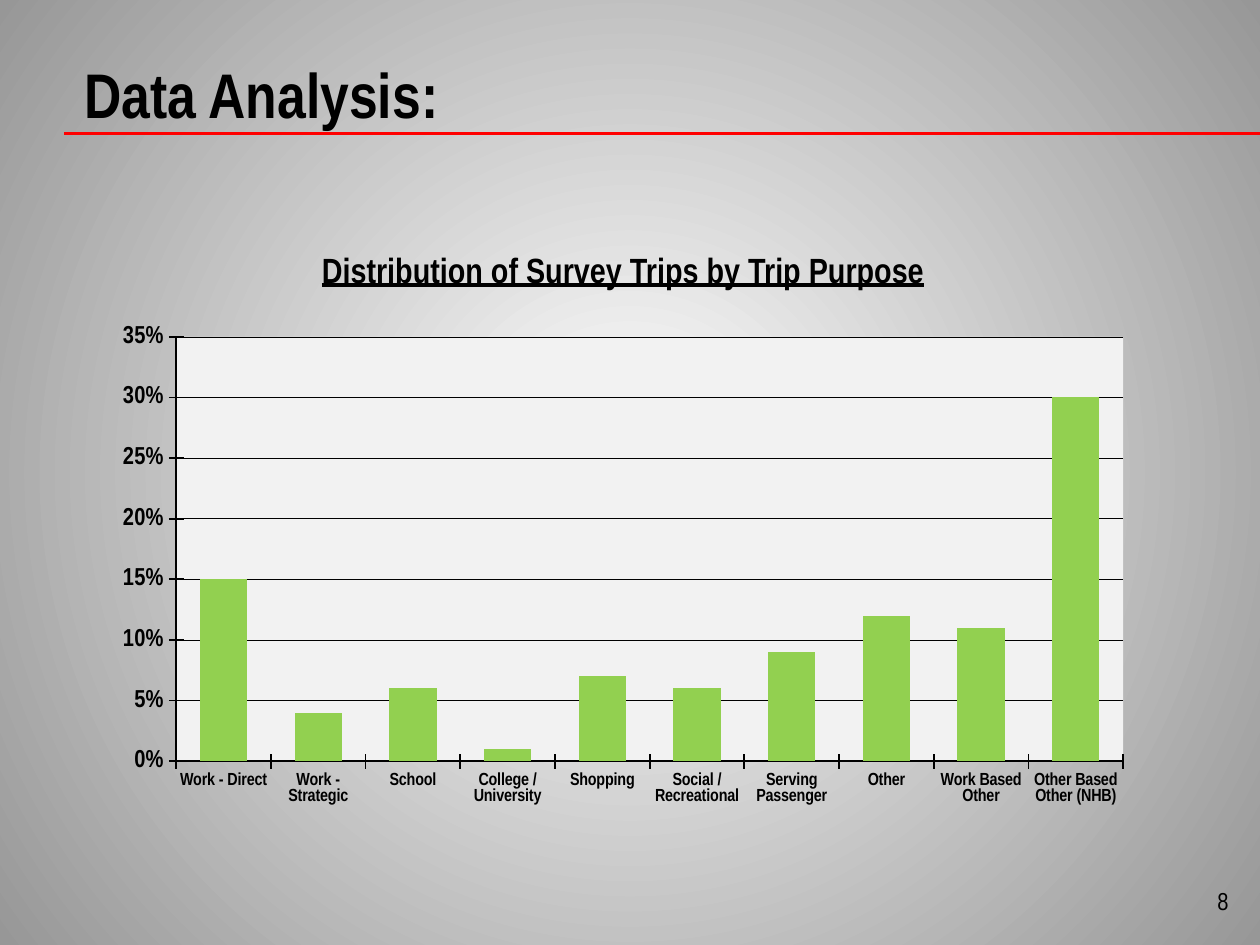
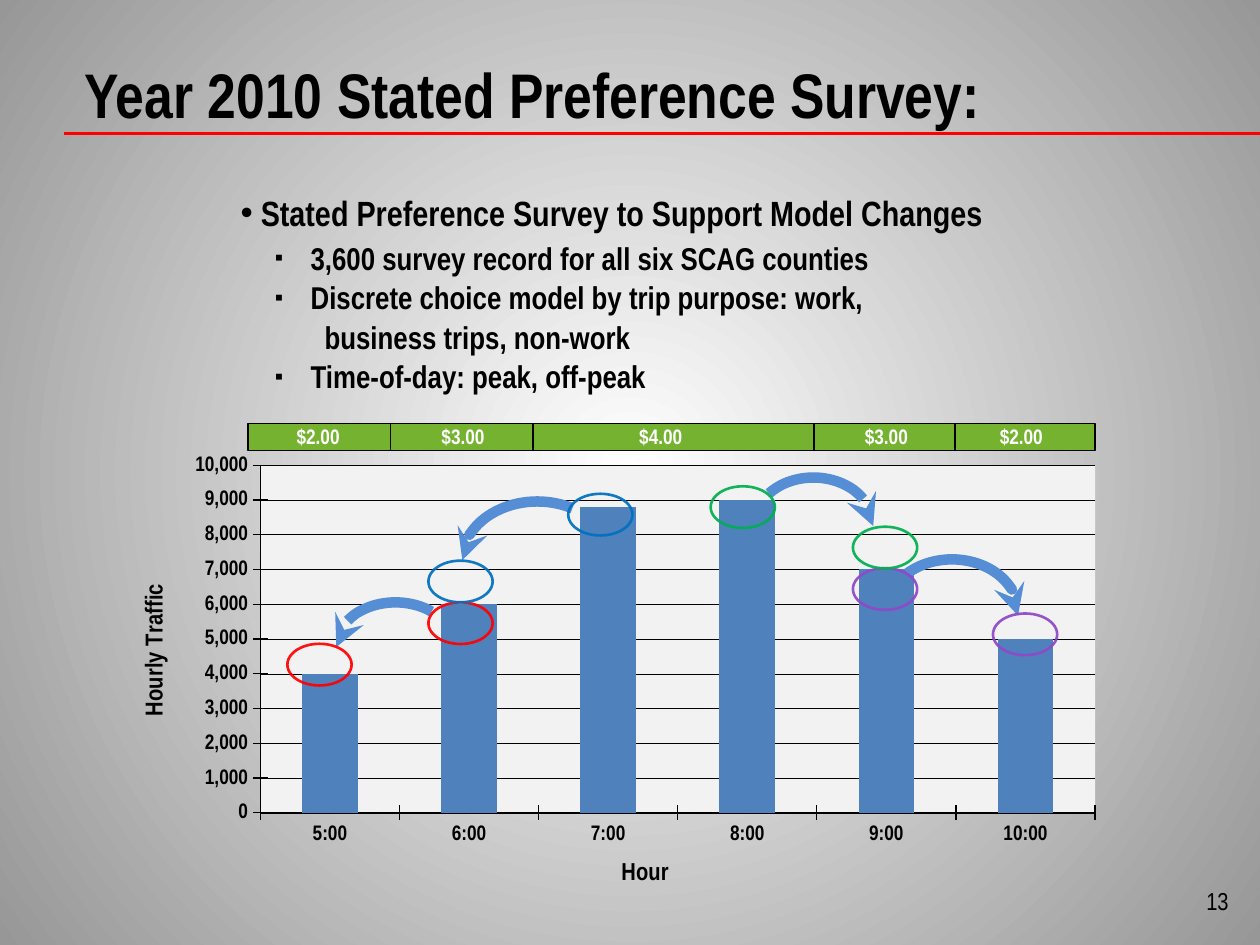
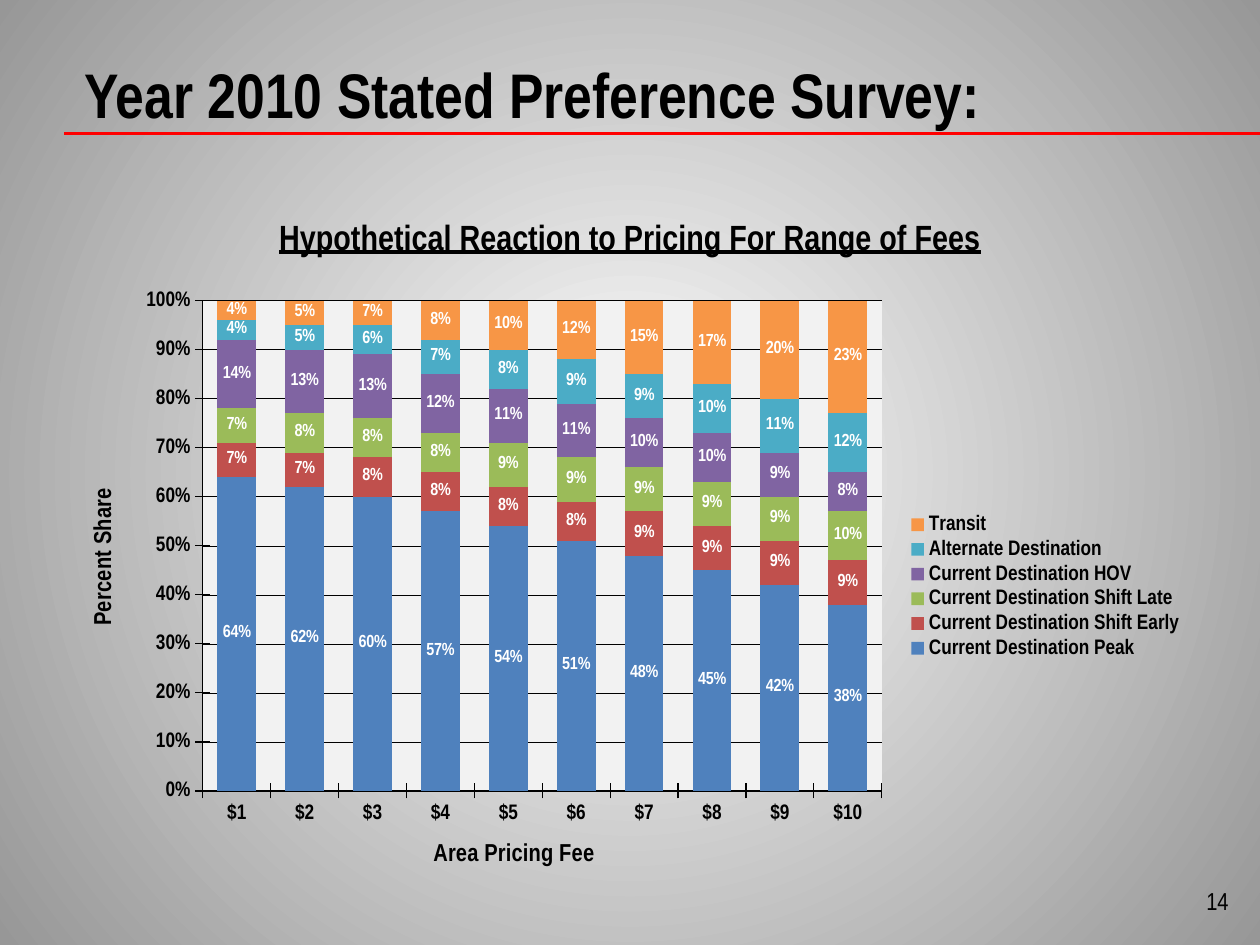
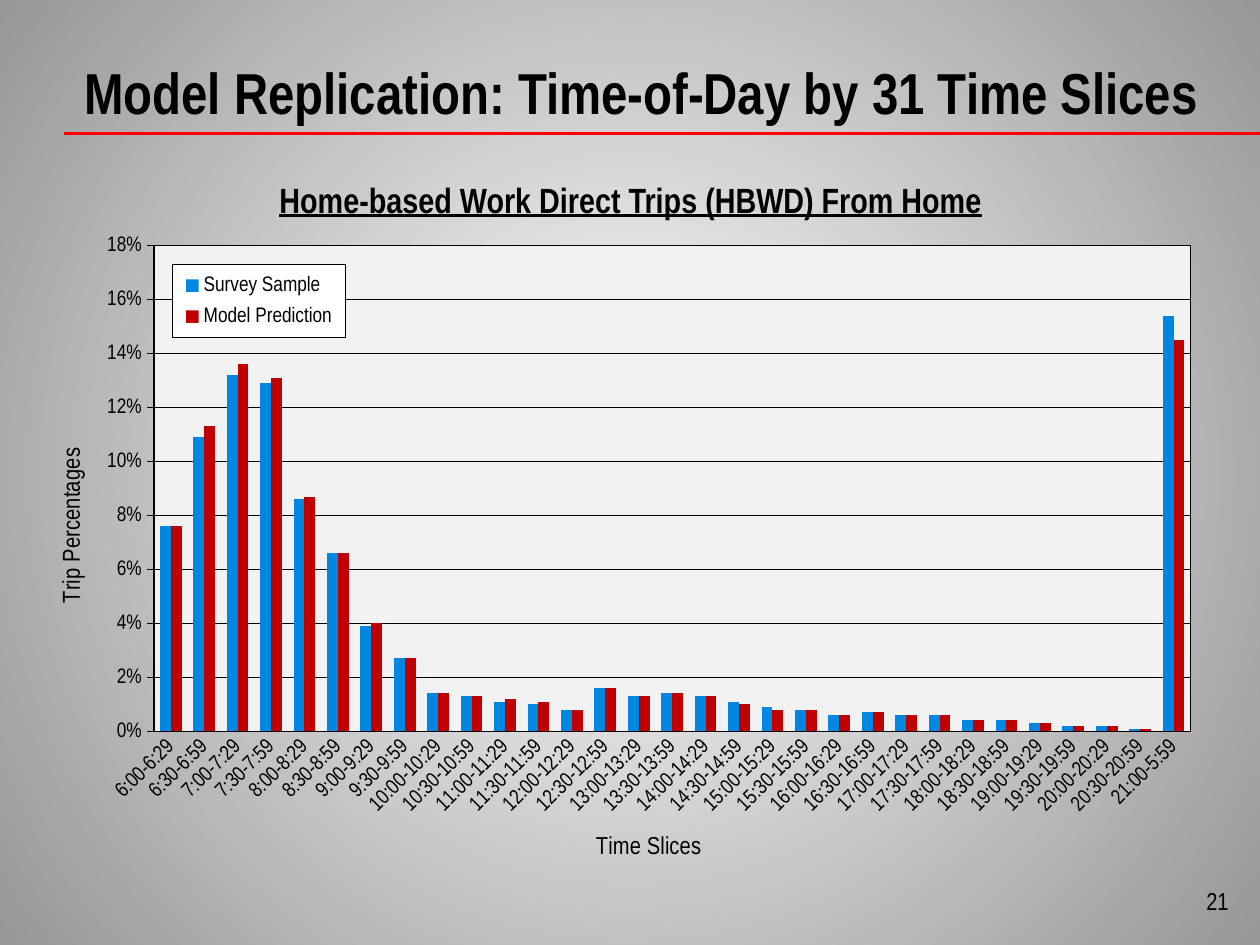
"""Build four slides on travel survey data, pricing response and model replication."""
from lxml import etree
from pptx import Presentation
from pptx.chart.data import CategoryChartData
from pptx.dml.color import RGBColor
from pptx.enum.chart import XL_CHART_TYPE, XL_LEGEND_POSITION, XL_TICK_MARK
from pptx.enum.shapes import MSO_CONNECTOR, MSO_SHAPE
from pptx.enum.text import MSO_ANCHOR, MSO_AUTO_SIZE, PP_ALIGN
from pptx.oxml import parse_xml
from pptx.oxml.ns import nsdecls, qn
from pptx.util import Pt

CLUSTERED, STACKED = XL_CHART_TYPE.COLUMN_CLUSTERED, XL_CHART_TYPE.COLUMN_STACKED
LEGEND_RIGHT, LEGEND_TOP = XL_LEGEND_POSITION.RIGHT, XL_LEGEND_POSITION.TOP
TICK_CROSS, TICK_NONE = XL_TICK_MARK.CROSS, XL_TICK_MARK.NONE
ARC, OVAL, RECTANGLE = MSO_SHAPE.ARC, MSO_SHAPE.OVAL, MSO_SHAPE.RECTANGLE
STRAIGHT = MSO_CONNECTOR.STRAIGHT
LEFT, CENTER, RIGHT = PP_ALIGN.LEFT, PP_ALIGN.CENTER, PP_ALIGN.RIGHT
TOP, MIDDLE, BOTTOM = MSO_ANCHOR.TOP, MSO_ANCHOR.MIDDLE, MSO_ANCHOR.BOTTOM
NO_FIT = MSO_AUTO_SIZE.NONE
TITLE_AND_BODY, TITLE_ONLY = 1, 5

FONT = "Arial Narrow"
COLORS = {
    "black": "000000", "white": "FFFFFF", "edge": "979797", "rule": "FF0000",
    "plot": "F2F2F2", "lime": "92D050", "band": "74B230", "arrow": "558ED5",
    "blue": "4F81BD", "red": "C0504D", "green": "9BBB59", "purple": "8064A2",
    "aqua": "4BACC6", "orange": "F79646", "sample": "0087E2", "model": "C00000",
    "ring red": "FF0000", "ring blue": "0070C0", "ring green": "00B050",
    "ring purple": "9148C8",
}

PREFERENCE_TITLE = "Year 2010 Stated Preference Survey:"
PURPOSES = {
    "Work - Direct": 0.15, "Work - Strategic": 0.04, "School": 0.06,
    "College / University": 0.01, "Shopping": 0.07, "Social / Recreational": 0.06,
    "Serving Passenger": 0.09, "Other": 0.12, "Work Based Other": 0.11,
    "Other Based Other (NHB)": 0.3,
}
HOURLY_TRAFFIC = {"5:00": 4000, "6:00": 6000, "7:00": 8800,
                  "8:00": 9000, "9:00": 7000, "10:00": 5000}

# text, size, bullet, left margin, hanging indent, space before
SURVEY_POINTS = [
    ("Stated Preference Survey to Support Model Changes", 20, "•", 11.5, 11.5, 2),
    ("3,600 survey record for all six SCAG counties", 18, "▪", 40, 20.5, 3),
    ("Discrete choice model by trip purpose: work,", 18, "▪", 40, 20.5, 1),
    ("business trips, non-work", 18, None, 48, 0, 1),
    ("Time-of-day: peak, off-peak", 18, "▪", 40, 20.5, 1),
]

FEE_BAND = (141.8, 241.9, 483.9, 15.5)
FEE_DIVIDERS = [223.2, 304.6, 465.1, 545.8]
FEES = [("$2.00", 181.8), ("$3.00", 264.6), ("$4.00", 377.6),
        ("$3.00", 506.5), ("$2.00", 583.6)]
RING_SIZE = (36.7, 23.8)
# ring colour, ring corners, arc box, arc adjustments, arc runs leftwards
TRAFFIC_SHIFTS = [
    ("ring red", [(164.2, 367.9), (244.8, 344.2)],
     (192.2, 344.2, 67.7, 51.1), (134.71, 0), True),
    ("ring purple", [(487.4, 324.7), (567.4, 350.6)],
     (506.2, 319.7, 75.6, 60.5), (132.81, 1.71), False),
    ("ring green", [(406.1, 277.9), (487.4, 301)],
     (430.6, 272.9, 68.4, 55.4), (129.74, 0), False),
    ("ring blue", [(324.7, 282.2), (244.8, 320.4)],
     (264.2, 286.6, 85.7, 67), (141.53, 0), True),
]

REACTIONS = [
    ("Current Destination Peak", "blue",
     [0.64, 0.62, 0.6, 0.57, 0.54, 0.51, 0.48, 0.45, 0.42, 0.38]),
    ("Current Destination Shift Early", "red",
     [0.07, 0.07, 0.08, 0.08, 0.08, 0.08, 0.09, 0.09, 0.09, 0.09]),
    ("Current Destination Shift Late", "green",
     [0.07, 0.08, 0.08, 0.08, 0.09, 0.09, 0.09, 0.09, 0.09, 0.1]),
    ("Current Destination HOV", "purple",
     [0.14, 0.13, 0.13, 0.12, 0.11, 0.11, 0.1, 0.1, 0.09, 0.08]),
    ("Alternate Destination", "aqua",
     [0.04, 0.05, 0.06, 0.07, 0.08, 0.09, 0.09, 0.1, 0.11, 0.12]),
    ("Transit", "orange",
     [0.04, 0.05, 0.07, 0.08, 0.1, 0.12, 0.15, 0.17, 0.2, 0.23]),
]
TIME_SLICES = [f"{hour}:{start:02}-{hour}:{start + 29}"
               for hour in range(6, 21) for start in (0, 30)] + ["21:00-5:59"]
REPLICATION = [
    ("Survey Sample", "sample",
     [0.076, 0.109, 0.132, 0.129, 0.086, 0.066, 0.039, 0.027, 0.014, 0.013, 0.011,
      0.01, 0.008, 0.016, 0.013, 0.014, 0.013, 0.011, 0.009, 0.008, 0.006, 0.007,
      0.006, 0.006, 0.004, 0.004, 0.003, 0.002, 0.002, 0.001, 0.154]),
    ("Model Prediction", "model",
     [0.076, 0.113, 0.136, 0.131, 0.087, 0.066, 0.04, 0.027, 0.014, 0.013, 0.012,
      0.011, 0.008, 0.016, 0.013, 0.014, 0.013, 0.01, 0.008, 0.008, 0.006, 0.007,
      0.006, 0.006, 0.004, 0.004, 0.003, 0.002, 0.002, 0.001, 0.145]),
]


def rgb(color):
    return RGBColor.from_string(COLORS[color])


def points(*lengths):
    return [Pt(length) for length in lengths]


def style_font(font, size, bold=False, color="black", underline=None):
    font.name, font.size, font.bold = FONT, Pt(size), bold
    font.color.rgb = rgb(color)
    if underline:
        font.underline = True


def style_line(line, color, width):
    line.color.rgb = rgb(color)
    line.width = Pt(width)


def place(shape, box):
    shape.left, shape.top, shape.width, shape.height = points(*box)


def add_label(slide, text, box, size, bold=False, color="black", align=CENTER,
              anchor=TOP, wrap=False, underline=None):
    frame = slide.shapes.add_textbox(*points(*box)).text_frame
    frame.text = text
    frame.word_wrap, frame.vertical_anchor = wrap, anchor
    frame.paragraphs[0].alignment = align
    style_font(frame.paragraphs[0].runs[0].font, size, bold, color, underline)


def add_line(slide, start, end, color, width):
    connector = slide.shapes.add_connector(STRAIGHT, *points(*start, *end))
    style_line(connector.line, color, width)
    etree.SubElement(connector.element.spPr, qn("a:effectLst"))


def add_outline(slide, preset, box, color, width):
    shape = slide.shapes.add_shape(preset, *points(*box))
    shape.shadow.inherit = False
    shape.fill.background()
    style_line(shape.line, color, width)
    return shape


def set_background(master):
    fill = master.background.fill
    fill.gradient()
    for stop, color, position in zip(fill.gradient_stops, ("white", "edge"), (0, 1)):
        stop.color.rgb = rgb(color)
        stop.position = position
    gradient = master.element.find(".//" + qn("a:gradFill"))
    for direction in gradient.findall(qn("a:lin")):
        gradient.remove(direction)
    gradient.append(parse_xml(
        f'<a:path {nsdecls("a")} path="circle">'
        '<a:fillToRect l="50000" t="50000" r="50000" b="50000"/></a:path>'))


def start_slide(deck, title, number, width, size=36, layout=TITLE_ONLY):
    slide = deck.slides.add_slide(deck.slide_layouts[layout])
    heading = slide.shapes.title
    place(heading, (41, 33.1, width, 46.8))
    frame = heading.text_frame
    frame.text = title
    frame.auto_size, frame.vertical_anchor, frame.word_wrap = NO_FIT, TOP, True
    paragraph = frame.paragraphs[0]
    paragraph.alignment, paragraph.line_spacing = LEFT, 0.9
    style_font(paragraph.runs[0].font, size, True)
    add_line(slide, (36.7, 76.3), (720, 76.3), "rule", 2)
    add_label(slide, number, (541.4, 500.4, 167.8, 28.8), 14,
              align=RIGHT, anchor=MIDDLE, wrap=True)
    return slide


def add_caption(slide, text, box, anchor=TOP):
    add_label(slide, text, box, 20, True, anchor=anchor, underline=True)


def area_style(fill, border=None):
    line = (f'<a:ln w="9525"><a:solidFill><a:srgbClr val="{COLORS[border]}"/>'
            '</a:solidFill></a:ln>' if border else "")
    return parse_xml(f'<c:spPr {nsdecls("c", "a")}><a:solidFill><a:srgbClr '
                     f'val="{COLORS[fill]}"/></a:solidFill>{line}</c:spPr>')


def set_layout(area, index, box, inner=False):
    for layout in area.findall(qn("c:layout")):
        area.remove(layout)
    target = '<c:layoutTarget val="inner"/>' if inner else ""
    modes = '<c:xMode val="edge"/><c:yMode val="edge"/>'
    sizes = "".join(f'<c:{key} val="{value}"/>' for key, value in zip("xywh", box))
    area.insert(index, parse_xml(
        f'<c:layout {nsdecls("c")}><c:manualLayout>{target}{modes}{sizes}'
        '</c:manualLayout></c:layout>'))


def style_axis(axis, size, bold, line_width, title):
    axis.major_tick_mark, axis.minor_tick_mark = TICK_CROSS, TICK_NONE
    style_font(axis.tick_labels.font, size, bold)
    style_line(axis.format.line, "black", line_width)
    if title:
        frame = axis.axis_title.text_frame
        frame.text = title
        style_font(frame.paragraphs[0].runs[0].font, 14, bold)


def add_columns(slide, box, categories, series, top, step, number_format="0%",
                kind=CLUSTERED, gap=150, overlap=0, sizes=(12, 12), bold=True,
                line_width=0.75, grid_width=0.25, titles=(None, None), border=None):
    data = CategoryChartData()
    data.categories = categories
    for name, _, values in series:
        data.add_series(name, values)
    chart = slide.shapes.add_chart(kind, *points(*box), data).chart
    chart.has_title = chart.has_legend = False
    style_font(chart.font, 12)
    plot = chart.plots[0]
    plot.vary_by_categories = False
    plot.gap_width, plot.overlap = gap, overlap
    for column, (_, color, _) in zip(plot.series, series):
        column.format.fill.solid()
        column.format.fill.fore_color.rgb = rgb(color)
    axes = (chart.category_axis, chart.value_axis)
    for axis, size, title in zip(axes, sizes, titles):
        style_axis(axis, size, bold, line_width, title)
    scale = chart.value_axis
    scale.minimum_scale, scale.maximum_scale, scale.major_unit = 0, top, step
    scale.tick_labels.number_format = number_format
    scale.tick_labels.number_format_is_linked = False
    scale.has_major_gridlines = True
    style_line(scale.major_gridlines.format.line, "black", grid_width)
    chart.element.find(".//" + qn("c:plotArea")).append(area_style("plot", border))
    return chart


def add_legend(chart, position, bold):
    chart.has_legend = True
    chart.legend.position = position
    chart.legend.include_in_layout = False
    style_font(chart.legend.font, 12, bold)


def add_survey_points(slide):
    body = slide.placeholders[1]
    place(body, (130.3, 105.8, 442.1, 121))
    frame = body.text_frame
    frame.text = "\n".join(point[0] for point in SURVEY_POINTS)
    frame.auto_size, frame.word_wrap = NO_FIT, False
    for paragraph, point in zip(frame.paragraphs, SURVEY_POINTS):
        _, size, bullet, margin, hanging, before = point
        paragraph.space_before = Pt(before)
        style_font(paragraph.runs[0].font, size, True)
        properties = paragraph.runs[0].font and paragraph._p.get_or_add_pPr()
        properties.set("marL", str(Pt(margin)))
        properties.set("indent", str(-Pt(hanging)))
        if bullet:
            if bullet == "▪":
                etree.SubElement(properties, qn("a:buSzPct"), val="75000")
            etree.SubElement(properties, qn("a:buFont"), typeface="Arial")
            etree.SubElement(properties, qn("a:buChar"), char=bullet)
        else:
            etree.SubElement(properties, qn("a:buNone"))


def add_fee_band(slide):
    _, top, _, height = FEE_BAND
    band = add_outline(slide, RECTANGLE, FEE_BAND, "black", 0.75)
    band.fill.solid()
    band.fill.fore_color.rgb = rgb("band")
    for x in FEE_DIVIDERS:
        add_line(slide, (x, top + height), (x, top), "black", 0.75)
    for fee, center in FEES:
        add_label(slide, fee, (center - 19.8, 238.3, 39.6, 21.6), 12, True, "white")


def add_traffic_shifts(slide):
    for _, _, box, angles, leftwards in TRAFFIC_SHIFTS:
        arc = add_outline(slide, ARC, box, "arrow", 6)
        arc.adjustments[0], arc.adjustments[1] = angles
        if leftwards:
            arc.element.spPr.xfrm.set("flipH", "1")
        etree.SubElement(arc.element.spPr.find(qn("a:ln")),
                         qn("a:tailEnd"), type="stealth")
    for color, corners, _, _, _ in TRAFFIC_SHIFTS:
        for corner in corners:
            ring = add_outline(slide, OVAL, corner + RING_SIZE, color, 1.5)
            tint = ring.element.spPr.find(qn("a:ln")).find(".//" + qn("a:srgbClr"))
            etree.SubElement(tint, qn("a:alpha"), val="93000")


def build_purposes(deck):
    slide = start_slide(deck, "Data Analysis:", "8", 296)
    add_columns(slide, (58.3, 180, 595.4, 285.8), list(PURPOSES),
                [("Series 1", "lime", list(PURPOSES.values()))], 0.35, 0.05,
                gap=100, sizes=(10, 14), line_width=1)
    add_caption(slide, "Distribution of Survey Trips by Trip Purpose",
                (175.7, 138.2, 360.7, 31.7))


def build_traffic(deck):
    slide = start_slide(deck, PREFERENCE_TITLE, "13", 616.3, layout=TITLE_AND_BODY)
    add_survey_points(slide)
    add_columns(slide, (65.5, 254.9, 571.7, 267.1), list(HOURLY_TRAFFIC),
                [("Series 1", "blue", list(HOURLY_TRAFFIC.values()))], 10000, 1000,
                number_format="#,##0", titles=("Hour", "Hourly Traffic"))
    add_fee_band(slide)
    add_traffic_shifts(slide)


def build_reactions(deck):
    slide = start_slide(deck, PREFERENCE_TITLE, "14", 616.3)
    chart = add_columns(slide, (36, 159.1, 648, 352.1),
                        [f"${fee}" for fee in range(1, 11)], REACTIONS, 1, 0.1,
                        kind=STACKED, gap=75, overlap=100,
                        titles=("Area Pricing Fee", "Percent Share"))
    add_legend(chart, LEGEND_RIGHT, True)
    for share in chart.plots[0].series:
        labels = share.data_labels
        labels.show_value = True
        labels.number_format, labels.number_format_is_linked = "0%", False
        style_font(labels.font, 10, True, "white")
    add_caption(slide, "Hypothetical Reaction to Pricing For Range of Fees",
                (151.2, 119.5, 417.6, 31.7))


def build_replication(deck):
    slide = start_slide(deck, "Model Replication: Time-of-Day by 31 Time Slices",
                        "21", 679, size=33)
    chart = add_columns(slide, (31, 111.6, 663.1, 395.3), TIME_SLICES, REPLICATION,
                        0.18, 0.02, gap=108, bold=False, line_width=0.5,
                        grid_width=0.5, titles=("Time Slices", "Trip Percentages"),
                        border="black")
    chart.category_axis.major_tick_mark = TICK_NONE
    chart.element.xpath(".//c:catAx/c:txPr/a:bodyPr")[0].set("rot", "-2700000")
    set_layout(chart.element.find(".//" + qn("c:plotArea")), 0,
               (0.086, 0.073, 0.893, 0.702), inner=True)
    add_legend(chart, LEGEND_TOP, False)
    legend = chart.element.find(".//" + qn("c:legend"))
    set_layout(legend, 1, (0.102, 0.1, 0.149, 0.106))
    legend.find(qn("c:overlay")).addnext(area_style("white", "black"))
    add_caption(slide, "Home-based Work Direct Trips (HBWD) From Home",
                (149.8, 97.9, 421.2, 31.7), BOTTOM)


def main():
    deck = Presentation()
    deck.slide_width, deck.slide_height = points(720, 540)
    set_background(deck.slide_master)
    build_purposes(deck)
    build_traffic(deck)
    build_reactions(deck)
    build_replication(deck)
    deck.save("out.pptx")


if __name__ == "__main__":
    main()
